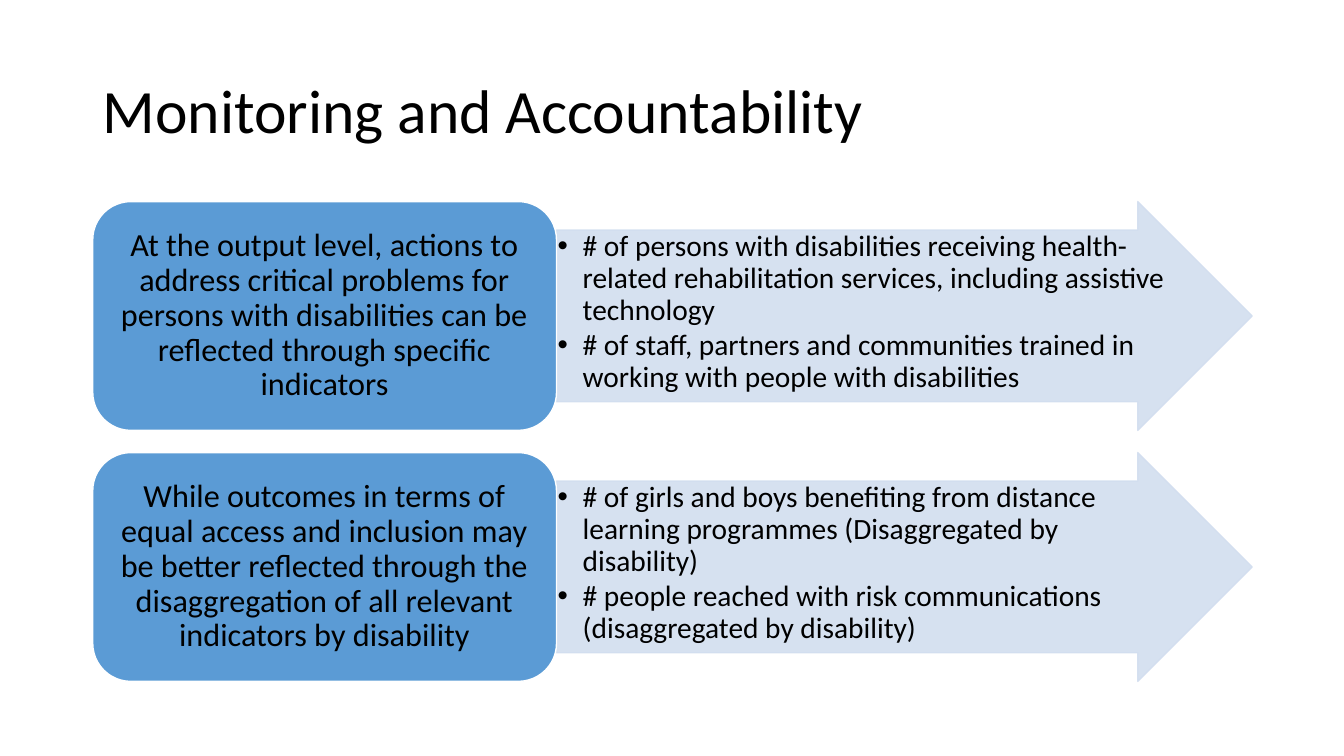
import pptx
import pptx.util
import pptx.dml.color
import pptx.enum.shapes
import pptx.enum.text
import pptx.oxml
import pptx.oxml.ns
import lxml.etree

Inches = pptx.util.Inches
Pt = pptx.util.Pt
Shapes = pptx.enum.shapes.MSO_SHAPE
Align = pptx.enum.text.PP_ALIGN
Anchor = pptx.enum.text.MSO_ANCHOR


def paint(color, value, opacity=100):
    """Set a solid fill's colour, and its opacity in percent."""
    color.solid()
    color.fore_color.rgb = pptx.dml.color.RGBColor.from_string(value)
    if opacity < 100:
        for node in color._xPr.iter(pptx.oxml.ns.qn("a:srgbClr")):
            alpha = lxml.etree.SubElement(node, pptx.oxml.ns.qn("a:alpha"))
            alpha.set("val", str(opacity * 1000))


def write(box, texts, size, align=Align.LEFT, anchor=Anchor.MIDDLE,
          margins=(0.1, 0.05), after=0, bullet=False):
    """Fill a shape with one paragraph per text."""
    frame = box.text_frame
    frame.word_wrap = True
    frame.auto_size = pptx.enum.text.MSO_AUTO_SIZE.NONE
    frame.vertical_anchor = anchor
    frame.margin_left = frame.margin_right = Inches(margins[0])
    frame.margin_top = frame.margin_bottom = Inches(margins[1])
    for index, text in enumerate(texts):
        para = frame.paragraphs[0] if index == 0 else frame.add_paragraph()
        para.alignment = align
        para.line_spacing = 0.9
        para.space_after = Pt(after)
        if bullet:
            layout = para._p.get_or_add_pPr()
            layout.set("marL", str(Inches(0.25)))
            layout.set("indent", str(-Inches(0.25)))
            font = lxml.etree.SubElement(layout, pptx.oxml.ns.qn("a:buFont"))
            font.set("typeface", "Arial")
            mark = lxml.etree.SubElement(layout, pptx.oxml.ns.qn("a:buChar"))
            mark.set("char", "•")
        span = para.add_run()
        span.text = text
        span.font.size = Pt(size)
        span.font.name = "Calibri"
        paint(span.font.fill, "000000")


# Page and grid
deck = pptx.Presentation()
deck.slide_width, deck.slide_height = Inches(13.33), Inches(7.5)
page = deck.slides.add_slide(deck.slide_layouts[5])

left, top, width = 0.92, 2.0, 11.5
label_width = 0.4 * width
row_height, row_step = 2.27, 2.49

# Title
title = page.shapes.title
title.left, title.top = Inches(left), Inches(0.4)
title.width, title.height = Inches(width), Inches(1.45)
write(title, ["Monitoring and Accountability"], 44)

# Each row: a level and its indicators
rows = [
    ("At the output level, actions to address critical problems for persons "
     "with disabilities can be reflected through specific indicators",
     ["# of persons with disabilities receiving health-related rehabilitation "
      "services, including assistive technology",
      "# of staff, partners and communities trained in working with people "
      "with disabilities"]),
    ("While outcomes in terms of equal access and inclusion may be better "
     "reflected through the disaggregation of all relevant indicators by "
     "disability",
     ["# of girls and boys benefiting from distance learning programmes "
      "(Disaggregated by disability)",
      "# people reached with risk communications (disaggregated by "
      "disability)"]),
]

for index, (level, indicators) in enumerate(rows):
    row_top = Inches(top + index * row_step)

    # Arrow with the indicators
    arrow = page.shapes.add_shape(
        Shapes.RIGHT_ARROW, Inches(left + label_width), row_top,
        Inches(width - label_width), Inches(row_height))
    arrow.adjustments[0], arrow.adjustments[1] = 0.75, 0.5
    paint(arrow.fill, "D2DEEF", opacity=90)
    paint(arrow.line.fill, "D2DEEF", opacity=90)
    write(arrow, indicators, 21, anchor=Anchor.TOP, margins=(0.01, 0.01),
          after=3, bullet=True)

    # Rounded label with the level
    label = page.shapes.add_shape(
        Shapes.ROUNDED_RECTANGLE, Inches(left), row_top,
        Inches(label_width), Inches(row_height))
    paint(label.fill, "5B9BD5")
    paint(label.line.fill, "FFFFFF")
    write(label, [level], 23, align=Align.CENTER)

    for shape in (arrow, label):
        shape.line.width = Pt(1)
        shape.shadow.inherit = False

deck.save("out.pptx")
